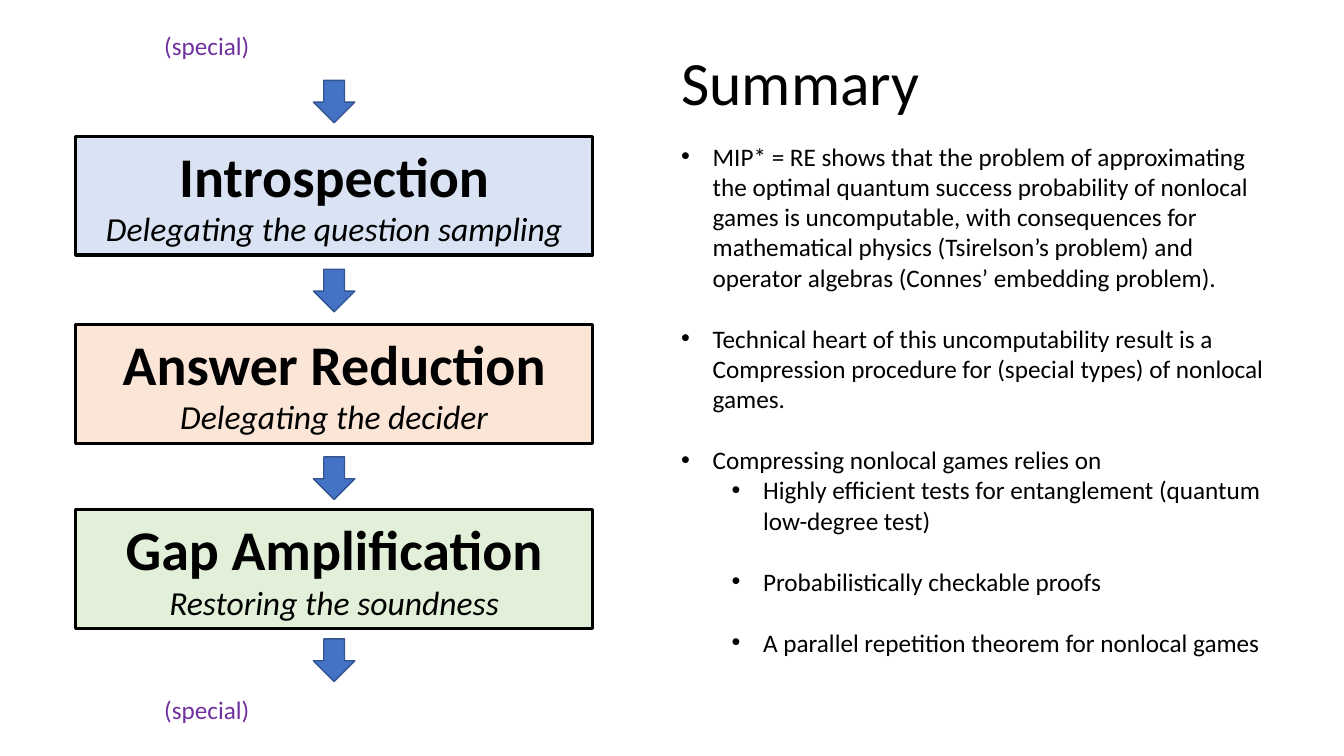
from lxml import etree
from pptx import Presentation
from pptx.dml.color import RGBColor
from pptx.enum.shapes import MSO_SHAPE
from pptx.enum.text import MSO_ANCHOR, MSO_AUTO_SIZE, PP_ALIGN
from pptx.oxml.ns import qn
from pptx.util import Pt

RECTANGLE, DOWN_ARROW = MSO_SHAPE.RECTANGLE, MSO_SHAPE.DOWN_ARROW
LEFT, CENTER = PP_ALIGN.LEFT, PP_ALIGN.CENTER
TOP, MIDDLE = MSO_ANCHOR.TOP, MSO_ANCHOR.MIDDLE
NO_AUTOFIT = MSO_AUTO_SIZE.NONE
TITLE_ONLY = 5
FONT = "Calibri"
BLACK, PURPLE = "000000", "7030A0"
ARROW_FILL, ARROW_LINE = "4472C4", "325491"
HANGING = 22.5
LEVEL_INDENT = 36
LINE_GAP = 22

STEPS = [
    ("Introspection", "Delegating the question sampling", "DAE3F3", 97.2),
    ("Answer Reduction", "Delegating the decider", "FBE5D6", 231.6),
    ("Gap Amplification", "Restoring the soundness", "E2F0D9", 364.2),
]
ARROW_TOPS = [57.4, 192.4, 326.4, 456.4]
SPECIAL_TOPS = [18, 492.5]
BULLETS = [
    ("MIP* = RE shows that the problem of approximating the optimal quantum "
     "success probability of nonlocal games is uncomputable, with consequences "
     "for mathematical physics (Tsirelson’s problem) and operator algebras "
     "(Connes’ embedding problem).", 0, 0),
    ("Technical heart of this uncomputability result is a Compression procedure "
     "for (special types) of nonlocal games.", 0, LINE_GAP),
    ("Compressing nonlocal games relies on", 0, LINE_GAP),
    ("Highly efficient tests for entanglement (quantum low-degree test)", 1, 0),
    ("Probabilistically checkable proofs", 1, LINE_GAP),
    ("A parallel repetition theorem for nonlocal games", 1, LINE_GAP),
]


def color(value):
    """Turn a hex string into a colour."""
    return RGBColor.from_string(value)


def set_bullet(paragraph, level):
    """Give a paragraph a hanging round bullet at its level."""
    paragraph.level = level
    properties = paragraph._p.get_or_add_pPr()
    properties.set("marL", str(Pt(HANGING + LEVEL_INDENT * level)))
    properties.set("indent", str(-Pt(HANGING)))
    etree.SubElement(properties, qn("a:buFont")).set("typeface", "Arial")
    etree.SubElement(properties, qn("a:buChar")).set("char", "•")


def write(frame, text, size=18, fill=BLACK, bold=False, italic=False,
          align=LEFT, level=None, before=0, spacing=1.0):
    """Write one formatted paragraph at the end of a text frame."""
    paragraph = frame.paragraphs[0]
    if paragraph.runs:
        paragraph = frame.add_paragraph()
    paragraph.alignment = align
    paragraph.line_spacing = spacing
    paragraph.space_before = Pt(before)
    if level is not None:
        set_bullet(paragraph, level)
    run = paragraph.add_run()
    run.text = text
    run.font.name = FONT
    run.font.size = Pt(size)
    run.font.bold = bold
    run.font.italic = italic
    run.font.color.rgb = color(fill)


def prepare_frame(shape, anchor):
    """Set wrapping and anchoring of a shape's text and return its frame."""
    frame = shape.text_frame
    frame.word_wrap = True
    frame.auto_size = NO_AUTOFIT
    frame.vertical_anchor = anchor
    return frame


def add_box(slide, kind, left, top, width, height, fill, line, line_width):
    """Add a filled and outlined preset shape."""
    shape = slide.shapes.add_shape(kind, Pt(left), Pt(top), Pt(width), Pt(height))
    shape.shadow.inherit = False
    shape.fill.solid()
    shape.fill.fore_color.rgb = color(fill)
    shape.line.color.rgb = color(line)
    shape.line.width = Pt(line_width)
    return shape


def add_step(slide, heading, detail, fill, top):
    """Add one step of the compression procedure."""
    shape = add_box(slide, RECTANGLE, 54, top, 369.4, 85, fill, BLACK, 2.25)
    frame = prepare_frame(shape, TOP)
    write(frame, heading, size=40, bold=True, align=CENTER)
    write(frame, detail, size=24, italic=True, align=CENTER)


def add_text_frame(slide, left, top, width, height):
    """Add a text box and return its frame."""
    box = slide.shapes.add_textbox(Pt(left), Pt(top), Pt(width), Pt(height))
    return prepare_frame(box, TOP)


def set_title(slide, text):
    """Move the title placeholder and fill it."""
    title = slide.shapes.title
    title.left, title.top = Pt(479.5), Pt(8.6)
    title.width, title.height = Pt(526.3), Pt(104.4)
    write(prepare_frame(title, MIDDLE), text, size=44, spacing=0.9)


def main():
    """Build the summary slide."""
    presentation = Presentation()
    presentation.slide_width, presentation.slide_height = Pt(960), Pt(540)
    slide = presentation.slides.add_slide(presentation.slide_layouts[TITLE_ONLY])
    set_title(slide, "Summary")
    for step in STEPS:
        add_step(slide, *step)
    for top in ARROW_TOPS:
        add_box(slide, DOWN_ARROW, 223.9, top, 29.6, 30.4, ARROW_FILL, ARROW_LINE, 1)
    for top in SPECIAL_TOPS:
        write(add_text_frame(slide, 110.2, top, 77.8, 29), "(special)", fill=PURPLE)
    summary = add_text_frame(slide, 479.5, 97.2, 443.5, 378)
    for text, level, before in BULLETS:
        write(summary, text, level=level, before=before)
    presentation.save("out.pptx")


if __name__ == "__main__":
    main()
